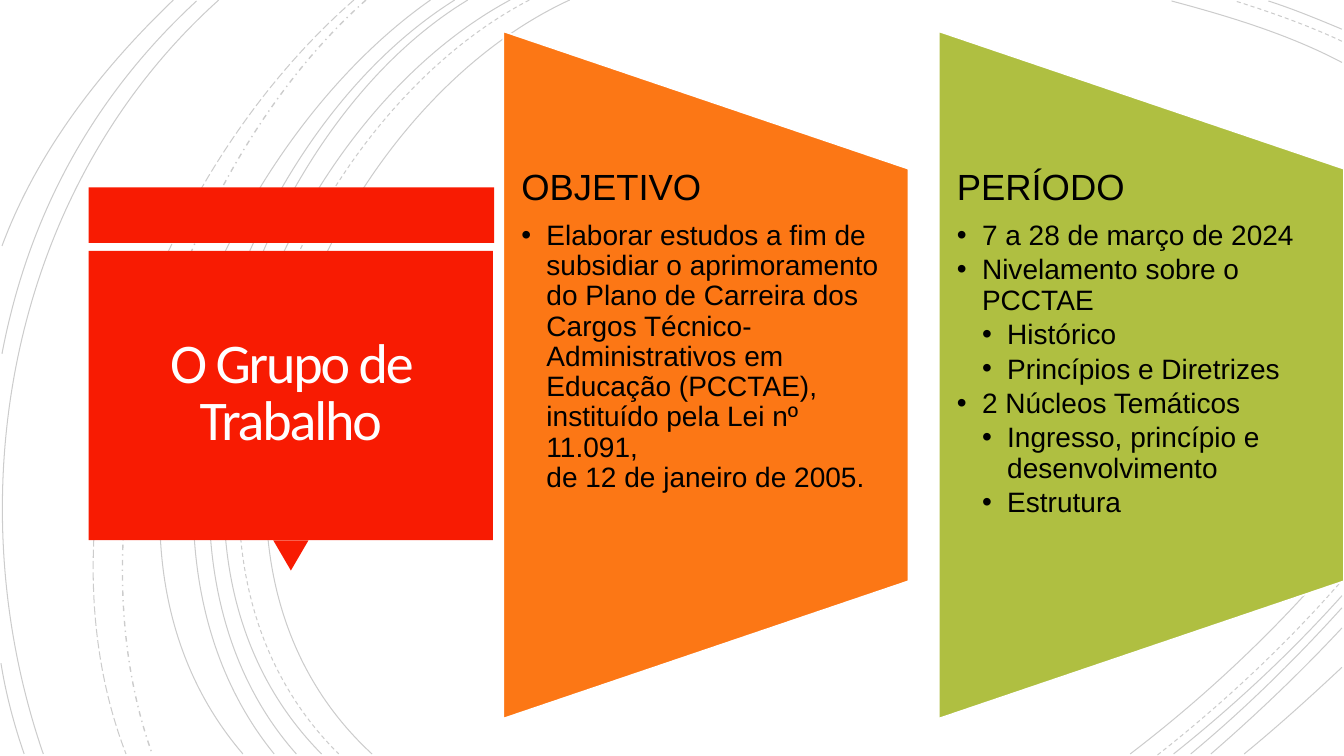
"""Build the slide that presents the working group, its aim and its period."""
from lxml import etree
from pptx import Presentation
from pptx.dml.color import RGBColor
from pptx.enum.dml import MSO_LINE
from pptx.enum.shapes import MSO_SHAPE
from pptx.enum.text import MSO_ANCHOR, PP_ALIGN
from pptx.oxml.ns import qn
from pptx.util import Pt

EMU_PER_PX = 9144
SLIDE_SIZE = (1333, 750)
RECTANGLE = MSO_SHAPE.RECTANGLE
TRIANGLE = MSO_SHAPE.ISOSCELES_TRIANGLE
TRAPEZOID = MSO_SHAPE.FLOWCHART_MANUAL_OPERATION
TOP, MIDDLE = MSO_ANCHOR.TOP, MSO_ANCHOR.MIDDLE
LEFT, CENTER = PP_ALIGN.LEFT, PP_ALIGN.CENTER
SOLID, DASH = MSO_LINE.SOLID, MSO_LINE.DASH
DASH_DOT, LONG_DASH = MSO_LINE.DASH_DOT, MSO_LINE.LONG_DASH

COLORS = {
    "arc": "000000",
    "title_block": "F81B02",
    "title_text": "FFFEFF",
    "objective": "FC7715",
    "period": "AFBF41",
    "panel_line": "FFFFFF",
    "panel_text": "000000",
}

ARCS = [
    (SOLID, (565, 0), (315, 115), (143, 540), (369, 748)),
    (SOLID, (1331, 62), (1278, 34), (1218, 16), (1162, 1)),
    (SOLID, (1121, 748), (1197, 690), (1269, 622), (1331, 548)),
    (DASH, (525, 0), (285, 125), (123, 537), (336, 748)),
    (DASH, (1331, 41), (1297, 25), (1260, 12), (1225, 1)),
    (DASH, (1148, 749), (1213, 698), (1275, 640), (1330, 577)),
    (SOLID, (506, 0), (270, 127), (110, 537), (319, 748)),
    (SOLID, (1331, 29), (1307, 19), (1283, 9), (1258, 1)),
    (SOLID, (1164, 748), (1223, 701), (1280, 648), (1331, 591)),
    (SOLID, (464, 0), (244, 133), (110, 541), (294, 748)),
    (SOLID, (1181, 748), (1234, 704), (1284, 655), (1331, 603)),
    (SOLID, (451, 0), (231, 138), (97, 533), (272, 748)),
    (SOLID, (1201, 748), (1246, 709), (1290, 667), (1331, 623)),
    (SOLID, (427, 0), (217, 147), (53, 529), (241, 748)),
    (SOLID, (1234, 748), (1267, 721), (1299, 692), (1331, 662)),
    (DASH_DOT, (363, 0), (176, 166), (65, 509), (151, 748)),
    (LONG_DASH, (351, 0), (157, 169), (29, 499), (125, 748)),
    (SOLID, (217, 0), (11, 185), (-46, 490), (43, 748)),
    (SOLID, (195, 1), (92, 96), (28, 214), (2, 351)),
    (SOLID, (1, 658), (6, 689), (14, 719), (24, 748)),
    (SOLID, (172, 0), (100, 69), (37, 150), (2, 244)),
]

PANELS = [
    (499, "objective", "OBJETIVO", [
        (1, "Elaborar estudos a fim de subsidiar o aprimoramento do Plano de "
            "Carreira dos Cargos Técnico-Administrativos em Educação (PCCTAE), "
            "instituído pela Lei nº 11.091,\nde 12 de janeiro de 2005."),
    ]),
    (931, "period", "PERÍODO", [
        (1, "7 a 28 de março de 2024"),
        (1, "Nivelamento sobre o PCCTAE"),
        (2, "Histórico"),
        (2, "Princípios e Diretrizes"),
        (1, "2 Núcleos Temáticos"),
        (2, "Ingresso, princípio e desenvolvimento"),
        (2, "Estrutura"),
    ]),
]


def px(length):
    """Turn pixels into EMU."""
    return length * EMU_PER_PX


def rgb(name):
    """Return the named colour."""
    return RGBColor.from_string(COLORS[name])


def add_arc(slide, dash, start, *controls):
    """Draw one faint cubic curve."""
    builder = slide.shapes.build_freeform(*start, scale=EMU_PER_PX)
    builder.add_line_segments(controls, close=False)
    shape = builder.convert_to_shape()
    shape.shadow.inherit = False
    shape.fill.background()
    shape.line.color.rgb = rgb("arc")
    shape.line.width = Pt(1 if dash == DASH_DOT else 0.75)
    shape.line.dash_style = dash
    color = shape.line._ln.find(".//" + qn("a:srgbClr"))
    etree.SubElement(color, qn("a:alpha"), val="20000")
    segments = shape._element.findall(".//" + qn("a:lnTo"))
    outline = segments[0].getparent()
    curve = etree.SubElement(outline, qn("a:cubicBezTo"))
    for segment in segments:
        curve.append(segment[0])
        outline.remove(segment)


def add_block(slide, kind, box, fill, rotation=0, line=None):
    """Add a filled preset shape."""
    shape = slide.shapes.add_shape(kind, *map(px, box))
    shape.shadow.inherit = False
    shape.rotation = rotation
    shape.fill.solid()
    shape.fill.fore_color.rgb = rgb(fill)
    if line:
        shape.line.color.rgb = rgb(line)
        shape.line.width = Pt(1.25)
    else:
        shape.line.fill.background()


def add_text_frame(slide, box, side, vertical, anchor):
    """Add a wrapping text box and return its text frame."""
    frame = slide.shapes.add_textbox(*map(px, box)).text_frame
    frame.word_wrap = True
    frame.vertical_anchor = anchor
    frame.margin_left = frame.margin_right = px(side)
    frame.margin_top = frame.margin_bottom = px(vertical)
    return frame


def write(paragraph, text, font="Arial", size=20, color="panel_text",
          align=LEFT, line_spacing=0.9, after=0, level=0, tracking=0):
    """Fill a paragraph, with a bullet when it has a level."""
    paragraph.text = text
    paragraph.alignment = align
    paragraph.line_spacing = line_spacing
    paragraph.space_after = Pt(after)
    for run in paragraph.runs:
        run.font.name = font
        run.font.size = Pt(size)
        run.font.color.rgb = rgb(color)
        if tracking:
            run.font._element.set("spc", str(tracking))
    if level:
        paragraph.level = level
        properties = paragraph._p.get_or_add_pPr()
        properties.set("marL", str(px(25 * level)))
        properties.set("indent", str(px(-25)))
        etree.SubElement(properties, qn("a:buFont"), typeface="Arial")
        etree.SubElement(properties, qn("a:buChar"), char="•")


def add_title(slide):
    """Add the red callout with the slide title."""
    add_block(slide, RECTANGLE, (88, 186, 402, 55), "title_block")
    add_block(slide, TRIANGLE, (271, 536, 35, 30), "title_block", rotation=180)
    add_block(slide, RECTANGLE, (88, 249, 401, 287), "title_block")
    frame = add_text_frame(slide, (97, 257, 383, 269), 25, 25, MIDDLE)
    write(frame.paragraphs[0], "O Grupo de Trabalho", font="Calibri", size=40,
          color="title_text", align=CENTER, line_spacing=0.85, tracking=-150)


def add_panel(slide, left, fill, heading, items):
    """Add a trapezoid panel with a heading and its bullets."""
    add_block(slide, TRAPEZOID, (left - 140, 171, 682, 402), fill,
              rotation=270, line="panel_line")
    frame = add_text_frame(slide, (left, 168, 402, 409), 18, 0, TOP)
    write(frame.paragraphs[0], heading, size=26, after=9)
    for level, text in items:
        write(frame.add_paragraph(), text, after=3, level=level)


def main():
    """Build and save the presentation."""
    presentation = Presentation()
    presentation.slide_width, presentation.slide_height = map(px, SLIDE_SIZE)
    slide = presentation.slides.add_slide(presentation.slide_layouts[6])
    for arc in ARCS:
        add_arc(slide, *arc)
    add_title(slide)
    for panel in PANELS:
        add_panel(slide, *panel)
    presentation.save("out.pptx")


if __name__ == "__main__":
    main()
